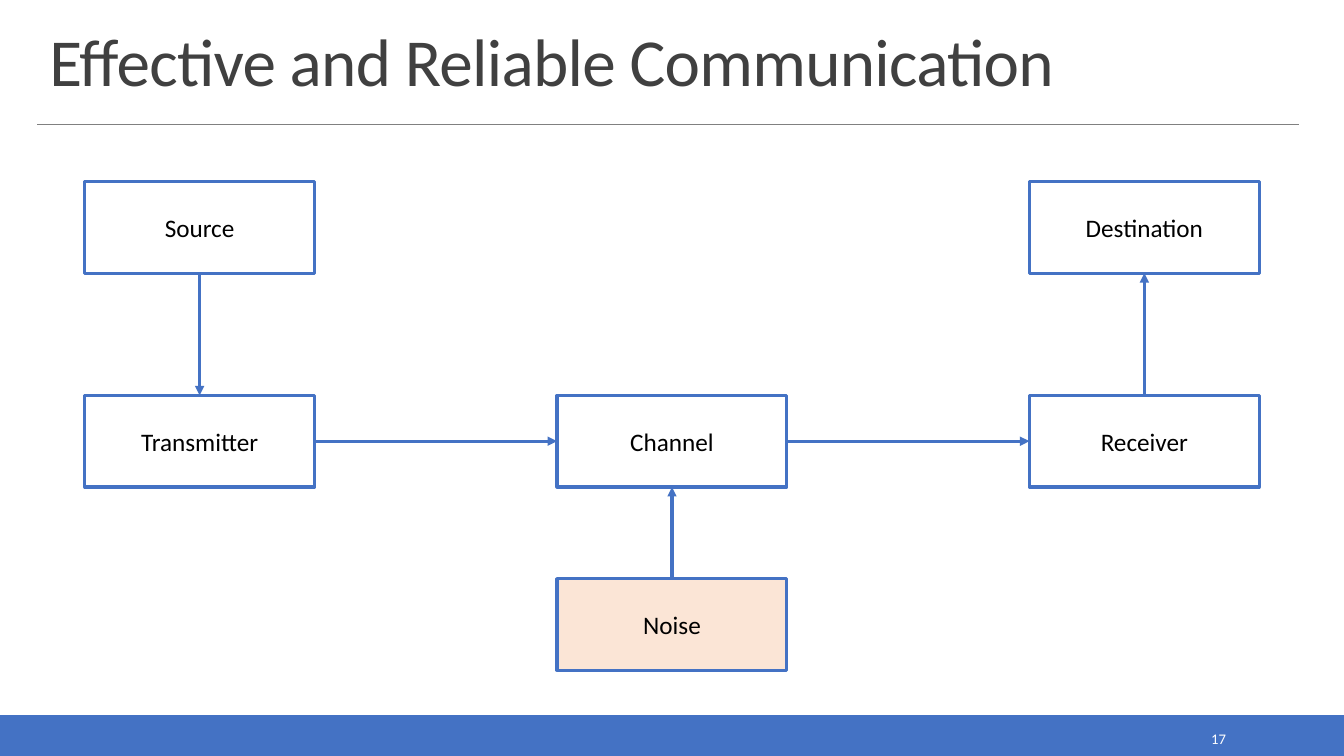
import pptx
import pptx.dml.color
import pptx.enum.shapes
import pptx.enum.text
import pptx.oxml.ns
import pptx.oxml.xmlchemy
import pptx.util
from dataclasses import dataclass

Pt = pptx.util.Pt
qn = pptx.oxml.ns.qn
Node = pptx.oxml.xmlchemy.OxmlElement
Align = pptx.enum.text.PP_ALIGN
Anchor = pptx.enum.text.MSO_ANCHOR
TOP, LEFT, BOTTOM, RIGHT = range(4)


@dataclass(frozen=True)
class Theme:
    font: str = "Calibri"
    blue: str = "4472C4"
    peach: str = "FBE5D6"
    gray: str = "808080"
    dark: str = "404040"
    black: str = "000000"
    white: str = "FFFFFF"
    title: float = 48
    label: float = 18
    number: float = 10.5


THEME = Theme()

# Block grid: left edges, top edges and block size, in points
COLS = [60.5 + 337.4 * i for i in range(3)]
ROWS = [129.6, 282.4, 413.3]
WIDE, HIGH = 164.2, 65.5

# Name, column, row, fill
BLOCKS = [
    ("Source", 0, 0, None),
    ("Transmitter", 0, 1, None),
    ("Channel", 1, 1, None),
    ("Noise", 1, 2, THEME.peach),
    ("Destination", 2, 0, None),
    ("Receiver", 2, 1, None),
]

# From block and side, to block and side
LINKS = [
    ("Source", BOTTOM, "Transmitter", TOP),
    ("Receiver", TOP, "Destination", BOTTOM),
    ("Channel", RIGHT, "Receiver", LEFT),
    ("Transmitter", RIGHT, "Channel", LEFT),
    ("Noise", TOP, "Channel", BOTTOM),
]


def color(code):
    return pptx.dml.color.RGBColor.from_string(code)


def write(shape, text, size, tint, align, anchor):
    frame = shape.text_frame
    frame.word_wrap = True
    frame.auto_size = pptx.enum.text.MSO_AUTO_SIZE.NONE
    frame.vertical_anchor = anchor
    frame.text = text
    para = frame.paragraphs[0]
    para.alignment = align
    para.font.name = THEME.font
    para.font.size = Pt(size)
    para.font.color.rgb = color(tint)
    return para


def add_title(slide, text):
    title = slide.shapes.title
    title.left, title.top = Pt(28.1), Pt(14.4)
    title.width, title.height = Pt(901.4), Pt(60.5)
    para = write(title, text, THEME.title, THEME.dark, Align.LEFT, Anchor.BOTTOM)
    para.line_spacing = 0.85
    # Tighten the letters by half a point
    para.runs[0].font._element.set("spc", "-50")


def add_box(slide, x, y, wide, high, fill, weight):
    box = slide.shapes.add_shape(
        pptx.enum.shapes.MSO_SHAPE.RECTANGLE, Pt(x), Pt(y), Pt(wide), Pt(high))
    box.shadow.inherit = False
    if fill:
        box.fill.solid()
        box.fill.fore_color.rgb = color(fill)
    else:
        box.fill.background()
    box.line.color.rgb = color(THEME.blue)
    box.line.width = Pt(weight)
    return box


def add_block(slide, name, col, row, fill):
    box = add_box(slide, COLS[col], ROWS[row], WIDE, HIGH, fill, 2.25)
    write(box, name, THEME.label, THEME.black, Align.CENTER, Anchor.MIDDLE)
    return box


def add_line(slide, x1, y1, x2, y2, tint, weight):
    line = slide.shapes.add_connector(
        pptx.enum.shapes.MSO_CONNECTOR.STRAIGHT, Pt(x1), Pt(y1), Pt(x2), Pt(y2))
    line.line.color.rgb = color(tint)
    line.line.width = Pt(weight)
    line._element.spPr.append(Node("a:effectLst"))
    return line


def add_arrow(slide, start, side, end, face):
    line = add_line(slide, 0, 0, 0, 0, THEME.blue, 2.25)
    line.begin_connect(start, side)
    line.end_connect(end, face)
    head = Node("a:tailEnd")
    head.set("type", "triangle")
    line._element.spPr.find(qn("a:ln")).append(head)


def add_number(slide, text):
    box = slide.shapes.add_textbox(Pt(779.8), Pt(517.7), Pt(103), Pt(20.2))
    write(box, text, THEME.number, THEME.white, Align.RIGHT, Anchor.MIDDLE)


def main():
    deck = pptx.Presentation()
    deck.slide_width, deck.slide_height = Pt(960), Pt(540)
    slide = deck.slides.add_slide(deck.slide_layouts[5])

    # Frame of the slide
    add_box(slide, 0, 511.2, 960, 28.8, THEME.blue, 1.25)
    add_line(slide, 26.6, 88.6, 928.1, 88.6, THEME.gray, 0.5)
    add_title(slide, "Effective and Reliable Communication")
    add_number(slide, "17")

    # Block diagram
    blocks = {block[0]: add_block(slide, *block) for block in BLOCKS}
    for start, side, end, face in LINKS:
        add_arrow(slide, blocks[start], side, blocks[end], face)

    deck.save("out.pptx")


if __name__ == "__main__":
    main()
